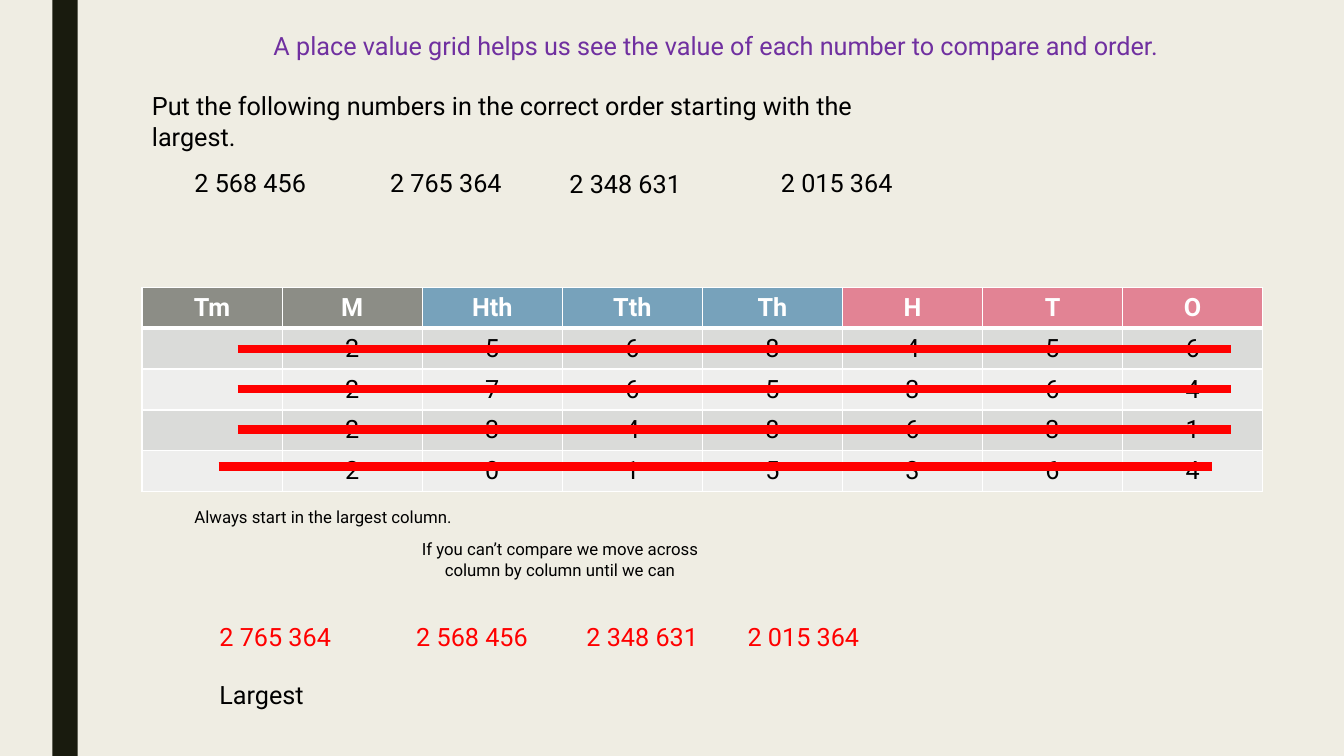
from lxml.etree import SubElement
from pptx import Presentation
from pptx.dml.color import RGBColor as RGB
from pptx.enum.shapes import MSO_CONNECTOR as LINK, MSO_SHAPE as SHAPE
from pptx.enum.text import MSO_ANCHOR as ANCHOR, PP_ALIGN as ALIGN
from pptx.oxml.ns import qn
from pptx.util import Cm, Pt

CREAM = RGB(0xEF, 0xED, 0xE3)
DARK = RGB(0x19, 0x1B, 0x0E)
GREY = RGB(0x8C, 0x8D, 0x86)
BLUE = RGB(0x77, 0xA2, 0xBB)
PINK = RGB(0xE2, 0x83, 0x94)
BANDS = RGB(0xDA, 0xDB, 0xD9), RGB(0xEE, 0xEE, 0xED)
WHITE = RGB(0xFF, 0xFF, 0xFF)
BLACK = RGB(0, 0, 0)
RED = RGB(0xFF, 0, 0)
PURPLE = RGB(0x70, 0x30, 0xA0)
FONT = "Roboto"

HEADS = [("Tm", GREY), ("M", GREY), ("Hth", BLUE), ("Tth", BLUE),
         ("Th", BLUE), ("H", PINK), ("T", PINK), ("O", PINK)]
GIVEN = [("2 568 456", 4.65, 4.09), ("2 765 364", 9.58, 4.09),
         ("2 348 631", 14.1, 4.11), ("2 015 364", 19.43, 4.09)]
STARTS = [5.28, 10.24, 14.53, 18.59]
STRIKES = [(5.99, 8.79), (5.99, 9.8), (5.99, 10.82), (5.51, 11.76)]
TEXTS = [
    ("A place value grid helps us see the value of each number to compare and order.",
     5.28, 0.64, 25.53, 18, PURPLE, ALIGN.CENTER),
    ("Put the following numbers in the correct order starting with the largest.",
     3.58, 2.16, 20.4, 18, BLACK, ALIGN.LEFT),
    ("Always start in the largest column.",
     4.65, 12.65, 6.99, 12, BLACK, ALIGN.CENTER),
    ("If you can’t compare we move across column by column until we can",
     9.63, 13.46, 8.97, 12, BLACK, ALIGN.CENTER),
    ("Largest", 5.28, 16.99, 2.64, 18, BLACK, ALIGN.LEFT),
]
LEFT, TOP, COL, ROW = 3.58, 7.24, 3.53, 1.03
SPAN = 25.03
NUM = 3.53


def style(para, size, ink, align, bold=False):
    para.alignment = align
    look = {"name": FONT, "size": Pt(size), "bold": bold}
    for key, val in look.items():
        setattr(para.font, key, val)
    para.font.color.rgb = ink


def write(text, x, y, width, size, ink, align):
    box = slide.shapes.add_textbox(Cm(x), Cm(y), Cm(width), Cm(1.03))
    box.text_frame.word_wrap = True
    para = box.text_frame.paragraphs[0]
    para.text = text
    style(para, size, ink, align)


def edge(cell, side, width):
    props = cell._tc.get_or_add_tcPr()
    line = SubElement(props, qn("a:ln" + side), w=str(Pt(width)))
    fill = SubElement(line, qn("a:solidFill"))
    SubElement(fill, qn("a:srgbClr"), val=str(WHITE))


def fill_cell(row, col, text, back):
    cell = grid.cell(row, col)
    top, base = 3 if row == 1 else 1, 3 if row == 0 else 1
    for side, width in zip("LRTB", (1, 1, top, base)):
        edge(cell, side, width)
    cell.fill.solid()
    cell.fill.fore_color.rgb = back
    cell.vertical_anchor = ANCHOR.MIDDLE
    cell.text = text
    ink = BLACK if row else WHITE
    style(cell.text_frame.paragraphs[0], 18, ink, ALIGN.CENTER, row == 0)


deck = Presentation()
deck.slide_width, deck.slide_height = Cm(33.87), Cm(19.05)
slide = deck.slides.add_slide(deck.slide_layouts[6])
slide.background.fill.solid()
slide.background.fill.fore_color.rgb = CREAM

bar = slide.shapes.add_shape(SHAPE.RECTANGLE, Cm(1.32), 0, Cm(0.64), deck.slide_height)
bar.shadow.inherit = False
bar.fill.solid()
bar.fill.fore_color.rgb = DARK
bar.line.fill.background()

rows, cols = len(GIVEN) + 1, len(HEADS)
grid = slide.shapes.add_table(rows, cols, Cm(LEFT), Cm(TOP),
                              Cm(COL * cols), Cm(ROW * rows)).table
for col, (head, back) in enumerate(HEADS):
    fill_cell(0, col, head, back)
for row, (num, x, y) in enumerate(GIVEN, 1):
    digits = num.replace(" ", "").rjust(cols)
    for col, digit in enumerate(digits):
        fill_cell(row, col, digit.strip(), BANDS[(row - 1) % 2])

for item in TEXTS:
    write(*item)
for num, x, y in GIVEN:
    write(num, x, y, NUM, 18, BLACK, ALIGN.LEFT)
ranked = sorted((num for num, x, y in GIVEN), reverse=True)
for num, x in zip(ranked, STARTS):
    write(num, x, 15.54, NUM, 18, RED, ALIGN.LEFT)

for x, y in STRIKES:
    strike = slide.shapes.add_connector(LINK.STRAIGHT, Cm(x), Cm(y), Cm(x + SPAN), Cm(y))
    strike.line.color.rgb = RED
    strike.line.width = Pt(6)
    SubElement(strike._element.spPr, qn("a:effectLst"))

deck.save("out.pptx")
